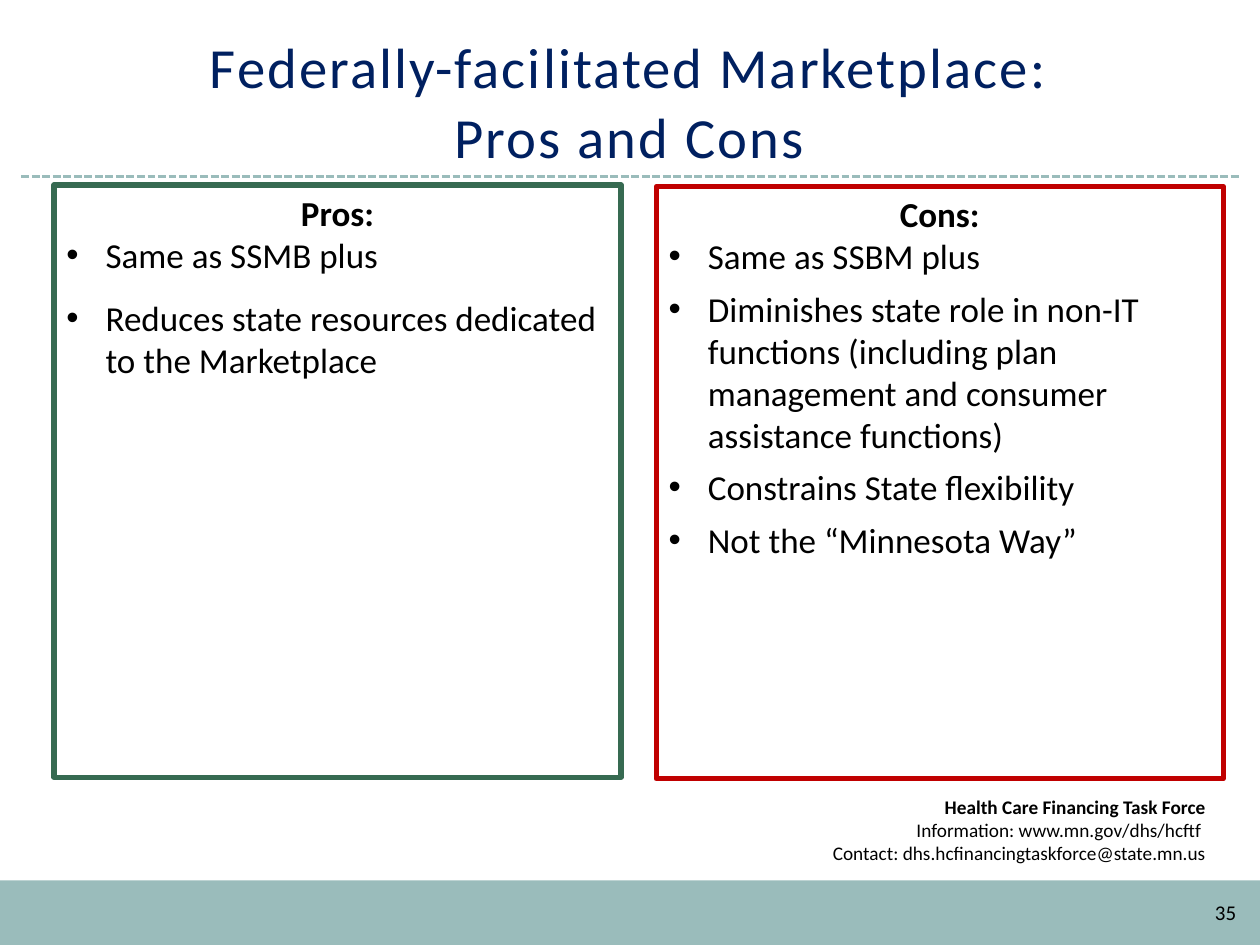
import pptx
import pptx.util
import pptx.dml.color
import pptx.enum.dml
import pptx.enum.shapes
import pptx.enum.text
import pptx.oxml.ns
import lxml.etree

Cm = pptx.util.Cm
Pt = pptx.util.Pt
ALIGN = pptx.enum.text.PP_ALIGN
ANCHOR = pptx.enum.text.MSO_ANCHOR
FONT = "Calibri"
COLORS = {
    "band": "9ABCBB",
    "title": "002060",
    "pros": "366A51",
    "cons": "C00000",
    "text": "000000",
    "white": "FFFFFF",
}
PANEL_WIDTH, PANEL_HEIGHT = 11.43, 11.94
BULLET_INDENT = Cm(0.79)


def rgb(name):
    return pptx.dml.color.RGBColor.from_string(COLORS[name])


def add_xml(parent, tag, **attributes):
    element = lxml.etree.SubElement(parent, pptx.oxml.ns.qn(tag))
    for key, value in attributes.items():
        element.set(key, value)
    return element


def add_run(paragraph, text, size, bold=False, color="text"):
    run = paragraph.add_run()
    run.text = text
    run.font.name = FONT
    run.font.size = Pt(size)
    run.font.bold = bold
    run.font.color.rgb = rgb(color)
    return run


def add_rectangle(slide, left, top, width, height, fill, line=None):
    shape = slide.shapes.add_shape(
        pptx.enum.shapes.MSO_SHAPE.RECTANGLE, Cm(left), Cm(top), Cm(width), Cm(height))
    shape.shadow.inherit = False
    shape.fill.solid()
    shape.fill.fore_color.rgb = rgb(fill)
    if line:
        shape.line.color.rgb = rgb(line)
        shape.line.width = Pt(3)
    else:
        shape.line.fill.background()
    shape.text_frame.word_wrap = True
    shape.text_frame.vertical_anchor = ANCHOR.TOP
    return shape


def add_dashed_rule(slide, left, right, top):
    rule = slide.shapes.add_connector(
        pptx.enum.shapes.MSO_CONNECTOR.STRAIGHT, Cm(left), Cm(top), Cm(right), Cm(top))
    rule.line.color.rgb = rgb("band")
    rule.line.width = Pt(1.5)
    rule.line.dash_style = pptx.enum.dml.MSO_LINE.SQUARE_DOT
    add_xml(rule.element.spPr, "a:effectLst")


def format_title(slide, lines):
    title = slide.shapes.title
    title.left, title.top, title.width, title.height = Cm(0.84), Cm(0.64), Cm(23.7), Cm(2.92)
    title.text_frame.word_wrap = True
    title.text_frame.auto_size = pptx.enum.text.MSO_AUTO_SIZE.NONE
    title.text_frame.vertical_anchor = ANCHOR.BOTTOM
    paragraph = title.text_frame.paragraphs[0]
    paragraph.alignment = ALIGN.CENTER
    paragraph.line_spacing = Pt(40)
    for index, line in enumerate(lines):
        if index:
            paragraph.add_line_break()
        run = add_run(paragraph, line, 32.4, color="title")
        run.font._element.set("spc", "120")


def add_panel(slide, left, top, color, heading, items, space_after):
    panel = add_rectangle(slide, left, top, PANEL_WIDTH, PANEL_HEIGHT, "white", color)
    paragraph = panel.text_frame.paragraphs[0]
    paragraph.alignment = ALIGN.CENTER
    add_run(paragraph, heading, 20, bold=True)
    for item in items:
        paragraph = panel.text_frame.add_paragraph()
        paragraph.alignment = ALIGN.LEFT
        paragraph.space_after = Pt(space_after)
        properties = paragraph._p.get_or_add_pPr()
        properties.set("marL", str(BULLET_INDENT))
        properties.set("indent", str(-BULLET_INDENT))
        add_xml(properties, "a:buFont", typeface="Arial")
        add_xml(properties, "a:buChar", char="•")
        add_run(paragraph, item, 20)


def add_contact(slide):
    box = add_rectangle(slide, 11.53, 15.9, 13.03, 1.7, "white")
    paragraph = box.text_frame.paragraphs[0]
    paragraph.alignment = ALIGN.RIGHT
    add_run(paragraph, "Health Care Financing Task Force", 11, bold=True)
    paragraph.add_line_break()
    add_run(paragraph, "Information: www.mn.gov/dhs/hcftf ", 11)
    paragraph = box.text_frame.add_paragraph()
    paragraph.alignment = ALIGN.RIGHT
    add_run(paragraph, "Contact: dhs.hcfinancingtaskforce@state.mn.us", 11)


def add_page_number(slide, number):
    box = slide.shapes.add_textbox(Cm(23.7), Cm(17.88), Cm(1.47), Cm(1.02))
    box.text_frame.word_wrap = True
    box.text_frame.vertical_anchor = ANCHOR.MIDDLE
    paragraph = box.text_frame.paragraphs[0]
    paragraph.alignment = ALIGN.RIGHT
    add_run(paragraph, number, 12)


def main():
    presentation = pptx.Presentation()
    presentation.slide_width, presentation.slide_height = Cm(25.4), Cm(19.05)
    slide = presentation.slides.add_slide(presentation.slide_layouts[5])

    # Footer band, rule and contact details
    add_rectangle(slide, 0, 17.75, 25.4, 1.3, "band")
    add_dashed_rule(slide, 0.43, 24.97, 3.56)
    add_contact(slide)

    # Title
    format_title(slide, ["Federally-facilitated Marketplace:", "Pros and Cons"])

    # Two panels side by side
    add_panel(slide, 1.09, 3.73, "pros", "Pros:", [
        "Same as SSMB plus",
        "Reduces state resources dedicated to the Marketplace",
    ], space_after=12)
    add_panel(slide, 13.23, 3.76, "cons", "Cons:", [
        "Same as SSBM plus",
        "Diminishes state role in non-IT functions (including plan management "
        "and consumer assistance functions)",
        "Constrains State flexibility",
        "Not the “Minnesota Way”",
    ], space_after=6)

    # Page number
    add_page_number(slide, "35")
    presentation.save("out.pptx")


if __name__ == "__main__":
    main()
